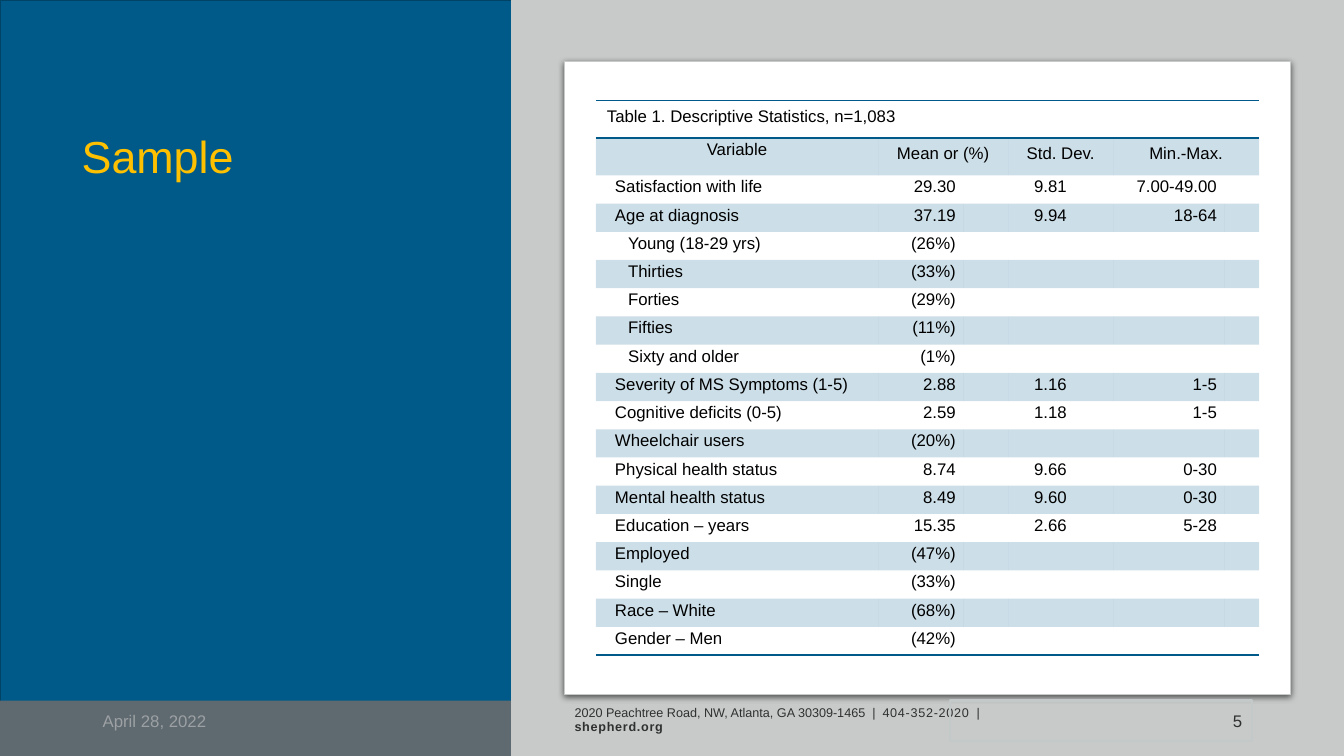
from lxml import etree
from pptx import Presentation
from pptx.dml.color import RGBColor
from pptx.enum.shapes import MSO_SHAPE
from pptx.enum.text import MSO_ANCHOR, MSO_AUTO_SIZE, PP_ALIGN
from pptx.oxml.ns import qn
from pptx.util import Inches, Pt

RECT, ROUND_RECT = MSO_SHAPE.RECTANGLE, MSO_SHAPE.ROUNDED_RECTANGLE
LEFT, CENTER, RIGHT = PP_ALIGN.LEFT, PP_ALIGN.CENTER, PP_ALIGN.RIGHT
MIDDLE = MSO_ANCHOR.MIDDLE

BLUE = RGBColor(0x00, 0x5A, 0x89)
DARK_BLUE = RGBColor(0x00, 0x43, 0x65)
SLATE = RGBColor(0x5E, 0x69, 0x70)
SILVER = RGBColor(0xC8, 0xCA, 0xCA)
PALE = RGBColor(0xC3, 0xC8, 0xC8)
GRAY = RGBColor(0x9D, 0xA1, 0xA4)
INK = RGBColor(0x30, 0x30, 0x30)
GOLD = RGBColor(0xFF, 0xC0, 0x00)
WHITE = RGBColor(0xFF, 0xFF, 0xFF)
BLACK = RGBColor(0x00, 0x00, 0x00)

NO_STYLE = "{2D5ABB26-0587-4C30-8999-92F81FD0307C}"
COLUMNS = [2.8, 0.85, 0.44, 0.66, 0.38, 1.11, 0.34]
CAPTION = "Table 1. Descriptive Statistics, n=1,083"
HEADINGS = [(1, "Mean or (%)"), (3, "Std. Dev."), (5, "Min.-Max.")]
STATISTICS = [
    ("Satisfaction with life", "29.30", "9.81", "7.00-49.00"),
    ("Age at diagnosis", "37.19", "9.94", "18-64"),
    ("Young (18-29 yrs)", "(26%)"),
    ("Thirties", "(33%)"),
    ("Forties", "(29%)"),
    ("Fifties", "(11%)"),
    ("Sixty and older", "(1%)"),
    ("Severity of MS Symptoms (1-5)", "2.88", "1.16", "1-5"),
    ("Cognitive deficits (0-5)", "2.59", "1.18", "1-5"),
    ("Wheelchair users", "(20%)"),
    ("Physical health status", "8.74", "9.66", "0-30"),
    ("Mental health status", "8.49", "9.60", "0-30"),
    ("Education – years", "15.35", "2.66", "5-28"),
    ("Employed", "(47%)"),
    ("Single", "(33%)"),
    ("Race – White", "(68%)"),
    ("Gender – Men", "(42%)"),
]
AGE_GROUPS = range(2, 7)


class Deck:
    """Holds the slide and its style, and draws each kind of element."""

    def __init__(self, prs, font="Arial"):
        self.s = prs.slides.add_slide(prs.slide_layouts[5])
        self.font = font

    def style(self, p, size, color, align=LEFT, spacing=None):
        p.alignment = align
        if spacing:
            p.line_spacing = spacing
        p.font.name = self.font
        p.font.size = Pt(size)
        p.font.color.rgb = color

    def shape(self, kind, box, fill=None, line=None, width=1):
        sp = self.s.shapes.add_shape(kind, *map(Inches, box))
        sp.shadow.inherit = False
        if fill is None:
            sp.fill.background()
        else:
            sp.fill.solid()
            sp.fill.fore_color.rgb = fill
        if line is None:
            sp.line.fill.background()
        else:
            sp.line.color.rgb = line
            sp.line.width = Pt(width)
        return sp

    def card(self, box):
        sp = self.shape(ROUND_RECT, box, WHITE, SILVER, 0.75)
        sp.adjustments[0] = 0
        effects = sp._element.spPr.find(qn("a:effectLst"))
        shadow = etree.SubElement(effects, qn("a:outerShdw"), blurRad=str(Pt(4.5)),
                                  dist=str(Pt(1.5)), dir="5400000", rotWithShape="0")
        color = etree.SubElement(shadow, qn("a:srgbClr"), val=str(BLACK))
        etree.SubElement(color, qn("a:alpha"), val="63000")

    def title(self, box, text):
        sp = self.s.shapes.title
        sp.left, sp.top, sp.width, sp.height = map(Inches, box)
        sp._element.getparent().append(sp._element)
        tf = sp.text_frame
        tf.text = text
        tf.auto_size = MSO_AUTO_SIZE.NONE
        tf.vertical_anchor = MIDDLE
        self.style(tf.paragraphs[0], 32, GOLD, spacing=0.9)

    def text(self, sp, runs, size, color, align=LEFT, spacing=None):
        tf = sp.text_frame
        tf.word_wrap = True
        tf.vertical_anchor = MIDDLE
        p = tf.paragraphs[0]
        self.style(p, size, color, align, spacing)
        p.space_after = Pt(6)
        for text, bold, tracking in runs:
            r = p.add_run()
            r.text = text
            if bold:
                r.font.bold = True
            if tracking:
                r._r.get_or_add_rPr().set("spc", str(tracking))

    def textbox(self, box, runs, size, color, spacing=None):
        sp = self.s.shapes.add_textbox(*map(Inches, box))
        self.text(sp, runs, size, color, spacing=spacing)

    def table(self, left, top, columns, heights):
        frame = self.s.shapes.add_table(len(heights), len(columns), Inches(left), Inches(top),
                                        Inches(sum(columns)), Inches(sum(heights)))
        tbl = frame.table
        tbl.first_row = tbl.horz_banding = False
        tbl._tbl.tblPr.find(qn("a:tableStyleId")).text = NO_STYLE
        for column, width in zip(tbl.columns, columns):
            column.width = Inches(width)
        for row, height in zip(tbl.rows, heights):
            row.height = Inches(height)
        return tbl

    def cell(self, c, text="", align=LEFT, indent=0, roomy=False):
        side, top, bottom = (0.11, 0.05, 0.05) if roomy else (0.08, 0.01, 0)
        c.margin_left = c.margin_right = Inches(side)
        c.margin_top, c.margin_bottom = Inches(top), Inches(bottom)
        p = c.text_frame.paragraphs[0]
        if text:
            p.add_run().text = text
        else:
            etree.SubElement(p._p, qn("a:endParaRPr"), sz="1200")
        self.style(p, 12, BLACK, align, 1.07)
        if indent:
            p._p.get_or_add_pPr().set("marL", str(Inches(indent)))

    def finish_cell(self, c, banded, edges):
        tcPr = c._tc.get_or_add_tcPr()
        for edge in edges:
            ln = etree.SubElement(tcPr, qn("a:" + edge), w=str(Pt(1)))
            fill = etree.SubElement(ln, qn("a:solidFill"))
            etree.SubElement(fill, qn("a:srgbClr"), val=str(BLUE))
        if banded:
            c.fill.solid()
            c.fill.fore_color.rgb = BLUE
            color = tcPr.find(qn("a:solidFill")).find(qn("a:srgbClr"))
            etree.SubElement(color, qn("a:alpha"), val="20000")
        else:
            c.fill.background()


def add_statistics(deck):
    heights = [0.37] * 2 + [0.28] * len(STATISTICS)
    tbl = deck.table(5.91, 1, COLUMNS, heights)
    deck.cell(tbl.cell(0, 0), CAPTION, roomy=True)
    tbl.cell(0, 0).merge(tbl.cell(0, len(COLUMNS) - 1))
    deck.cell(tbl.cell(1, 0), "Variable", CENTER)
    for col, heading in HEADINGS:
        deck.cell(tbl.cell(1, col), heading, CENTER, roomy=True)
        tbl.cell(1, col).merge(tbl.cell(1, col + 1))
    for i, (variable, *values) in enumerate(STATISTICS):
        deck.cell(tbl.cell(i + 2, 0), variable, indent=0.24 if i in AGE_GROUPS else 0.11)
        by_column = dict(zip((1, 3, 5), values))
        for col in range(1, len(COLUMNS)):
            deck.cell(tbl.cell(i + 2, col), by_column.get(col, ""), RIGHT)
    edges = {0: ("lnT", "lnB"), len(heights) - 1: ("lnB",)}
    for row in range(len(heights)):
        for col in range(len(COLUMNS)):
            deck.finish_cell(tbl.cell(row, col), row % 2 == 1, edges.get(row, ()))


def main():
    prs = Presentation()
    prs.slide_width, prs.slide_height = Inches(13.33), Inches(7.5)
    deck = Deck(prs)
    deck.shape(RECT, (0, 0, 13.33, 7.05), BLUE, DARK_BLUE)
    deck.shape(RECT, (0, 6.95, 13.33, 0.55), SLATE)
    deck.title((0.71, 0.69, 3.83, 1.77), "Sample")
    deck.shape(RECT, (5.07, 0, 8.26, 7.5), SILVER)
    deck.card((5.6, 0.61, 7.2, 6.28))
    deck.textbox((0.92, 6.95, 3, 0.4), [("April 28, 2022", False, 0)], 12, GRAY)
    address = [("2020 Peachtree Road, NW, Atlanta, GA 30309-1465  |  ", False, 0),
               ("404-352-2020", False, 50), ("  |  ", False, 0), ("shepherd.org", True, 50)]
    deck.textbox((5.6, 6.95, 4.5, 0.4), address, 9, INK, 0.9)
    number = deck.shape(RECT, (9.42, 6.95, 3, 0.4), line=PALE, width=1.5)
    deck.text(number, [("5", False, 0)], 12, INK, RIGHT)
    add_statistics(deck)
    prs.save("out.pptx")


if __name__ == "__main__":
    main()
